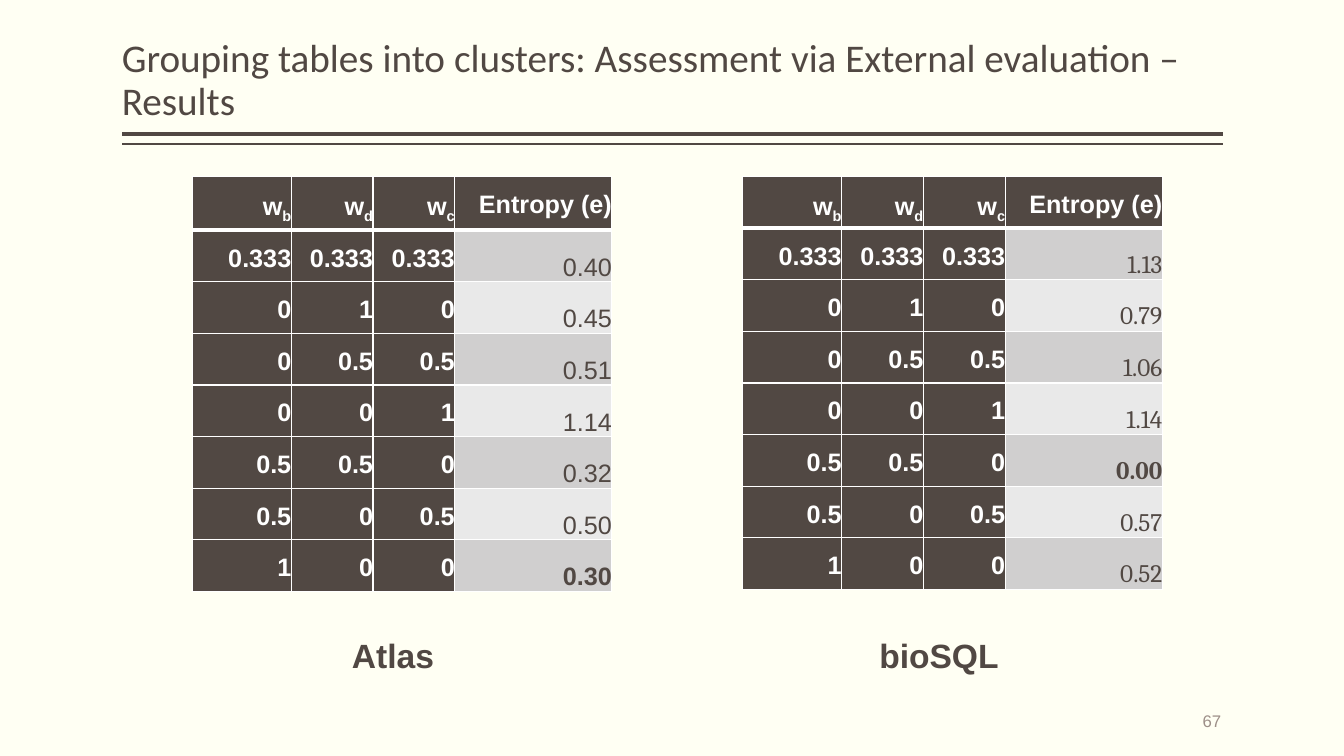
from dataclasses import dataclass
from typing import Any

from lxml import etree
from pptx import Presentation
from pptx.dml.color import RGBColor
from pptx.enum.shapes import MSO_CONNECTOR
from pptx.enum.text import MSO_ANCHOR, MSO_AUTO_SIZE, PP_ALIGN
from pptx.oxml.ns import qn
from pptx.util import Cm, Pt

LEFT, MID, RIGHT = PP_ALIGN.LEFT, PP_ALIGN.CENTER, PP_ALIGN.RIGHT
TOP, CENTER, BOTTOM = MSO_ANCHOR.TOP, MSO_ANCHOR.MIDDLE, MSO_ANCHOR.BOTTOM
STRAIGHT = MSO_CONNECTOR.STRAIGHT
FIXED = MSO_AUTO_SIZE.NONE

CREAM = RGBColor(0xFF, 0xFF, 0xF3)
BROWN = RGBColor(0x51, 0x48, 0x43)
WHITE = RGBColor(0xFF, 0xFF, 0xFF)
DARK = RGBColor(0xD0, 0xCF, 0xCF)
LIGHT = RGBColor(0xE9, 0xE9, 0xE9)
TAUPE = RGBColor(0x9D, 0x8F, 0x88)

EDGE, WIDTH = 3.07, 27.74
TABLE_TOP, ROW = 4.45, 1.3
COLS = (2.49, 2.06, 2.06, 3.96)
HEADS = (("w", "b"), ("w", "d"), ("w", "c"), ("Entropy (e)", ""))
WEIGHTS = (
    ("0.333", "0.333", "0.333"),
    ("0", "1", "0"),
    ("0", "0.5", "0.5"),
    ("0", "0", "1"),
    ("0.5", "0.5", "0"),
    ("0.5", "0", "0.5"),
    ("1", "0", "0"),
)


@dataclass(frozen=True)
class Grid:
    left: float
    head: float
    face: str
    scores: tuple[str, ...]


@dataclass(frozen=True)
class Label:
    text: str
    box: tuple[float, float, float, float]
    anchor: Any
    align: Any
    space: float
    font: dict[str, Any]


@dataclass(frozen=True)
class Rule:
    top: float
    weight: float


GRIDS = (
    Grid(4.85, 1.35, "Arial", ("0.40", "0.45", "0.51", "1.14", "0.32", "0.50", "0.30")),
    Grid(18.72, 1.3, "Cambria", ("1.13", "0.79", "1.06", "1.14", "0.00", "0.57", "0.52")),
)
TITLE = Label(
    "Grouping tables into clusters: Assessment via External evaluation – Results",
    (EDGE, 0.2, WIDTH, 3.05), BOTTOM, LEFT, 0.9,
    {"name": "Calibri", "size": Pt(28), "bold": False},
)
NAME = {"name": "Arial", "size": Pt(24), "bold": True}
LABELS = (
    Label("Atlas", (EDGE, 14.86, 13.67, 2.29), BOTTOM, MID, 0.9, NAME),
    Label("bioSQL ", (16.74, 14.86, 14.07, 2.29), BOTTOM, MID, 0.9, NAME),
)
NUMBER = Label("67", (25.7, 17.65, 5.08, 1.02), CENTER, RIGHT, 1.0,
               {"name": "Arial", "size": Pt(12)})
RULES = (Rule(3.38, 3), Rule(3.63, 1))


def apply(target: Any, values: dict[str, Any]) -> None:
    for key, value in values.items():
        setattr(target, key, value)


def add_run(para: Any, text: str, color: RGBColor, font: dict[str, Any]) -> Any:
    run = para.add_run()
    run.text = text
    apply(run.font, font)
    run.font.color.rgb = color
    return run


def draw_label(shape: Any, label: Label, color: RGBColor) -> None:
    sides = ("left", "top", "width", "height")
    apply(shape, {side: Cm(size) for side, size in zip(sides, label.box)})
    frame = shape.text_frame
    apply(frame, {
        "word_wrap": True, "auto_size": FIXED, "vertical_anchor": label.anchor,
        "margin_left": 0, "margin_right": 0,
        "margin_top": Cm(0.13), "margin_bottom": Cm(0.13),
    })
    para = frame.paragraphs[0]
    apply(para, {"alignment": label.align, "line_spacing": label.space})
    add_run(para, label.text, color, label.font)


def draw_rule(slide: Any, rule: Rule) -> None:
    line = slide.shapes.add_connector(
        STRAIGHT, Cm(EDGE + WIDTH), Cm(rule.top), Cm(EDGE), Cm(rule.top))
    line.line.color.rgb = BROWN
    line.line.width = Pt(rule.weight)
    etree.SubElement(line._element.spPr, qn("a:effectLst"))


def add_edges(cell: Any, top: float, base: float) -> None:
    props = cell._tc.get_or_add_tcPr()
    for side, weight in (("L", 1), ("R", 1), ("T", top), ("B", base)):
        edge = etree.SubElement(props, qn(f"a:ln{side}"), w=str(Pt(weight)))
        fill = etree.SubElement(edge, qn("a:solidFill"))
        etree.SubElement(fill, qn("a:srgbClr"), val=str(WHITE))


def draw_cell(cell: Any, row: int, col: int, grid: Grid) -> None:
    score = row > 0 and col == len(COLS) - 1
    apply(cell, {
        "margin_left": 0, "margin_right": 0, "margin_top": 0, "margin_bottom": 0,
        "vertical_anchor": BOTTOM if score else TOP,
    })
    add_edges(cell, 3 if row == 1 else 1, 3 if row == 0 else 1)
    cell.fill.solid()
    cell.fill.fore_color.rgb = (DARK if row % 2 else LIGHT) if score else BROWN
    para = cell.text_frame.paragraphs[0]
    apply(para, {"alignment": RIGHT, "line_spacing": 1.5})
    font = {"name": "Arial", "size": Pt(18), "bold": True}
    if score:
        text = grid.scores[row - 1]
        best = text == min(grid.scores, key=float)
        add_run(para, text, BROWN, font | {"name": grid.face, "bold": best})
    elif row:
        add_run(para, WEIGHTS[row - 1][col], WHITE, font)
    else:
        text, sub = HEADS[col]
        add_run(para, text, WHITE, font)
        if sub:
            run = add_run(para, sub, WHITE, font)
            run._r.get_or_add_rPr().set("baseline", "-25000")


def draw_grid(slide: Any, grid: Grid) -> None:
    count = len(WEIGHTS) + 1
    frame = slide.shapes.add_table(
        count, len(COLS), Cm(grid.left), Cm(TABLE_TOP),
        Cm(sum(COLS)), Cm(grid.head + ROW * len(WEIGHTS)))
    table = frame.table
    apply(table, {"first_row": False, "horz_banding": False})
    for col, width in enumerate(COLS):
        table.columns[col].width = Cm(width)
    for row in range(count):
        table.rows[row].height = Cm(ROW if row else grid.head)
        for col in range(len(COLS)):
            draw_cell(table.cell(row, col), row, col, grid)


def main() -> None:
    deck = Presentation()
    apply(deck, {"slide_width": Cm(33.87), "slide_height": Cm(19.05)})
    slide = deck.slides.add_slide(deck.slide_layouts.get_by_name("Title Only"))
    slide.background.fill.solid()
    slide.background.fill.fore_color.rgb = CREAM
    for rule in RULES:
        draw_rule(slide, rule)
    draw_label(slide.shapes.title, TITLE, BROWN)
    for label in LABELS:
        draw_label(slide.shapes.add_textbox(0, 0, 0, 0), label, BROWN)
    for grid in GRIDS:
        draw_grid(slide, grid)
    draw_label(slide.shapes.add_textbox(0, 0, 0, 0), NUMBER, TAUPE)
    deck.save("out.pptx")


if __name__ == "__main__":
    main()
